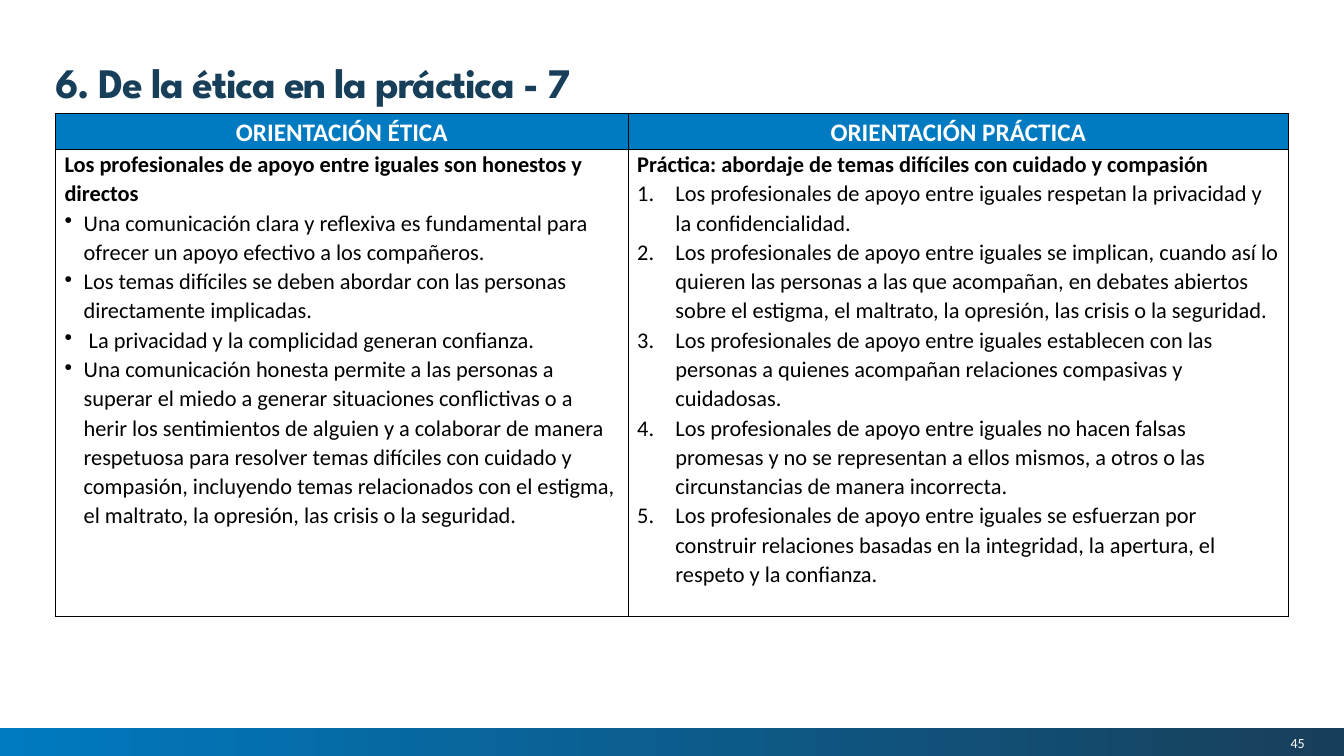
from lxml import etree
from pptx import Presentation
from pptx.dml.color import RGBColor
from pptx.enum.shapes import MSO_SHAPE
from pptx.enum.text import MSO_ANCHOR, MSO_AUTO_SIZE, PP_ALIGN
from pptx.oxml.ns import qn
from pptx.util import Inches, Pt

RECT = MSO_SHAPE.RECTANGLE
TOP, MIDDLE = MSO_ANCHOR.TOP, MSO_ANCHOR.MIDDLE
LEFT, CENTER, RIGHT = PP_ALIGN.LEFT, PP_ALIGN.CENTER, PP_ALIGN.RIGHT
NO_FIT = MSO_AUTO_SIZE.NONE

BLUE, NAVY, WHITE, BLACK = "007AC0", "183F5A", "FFFFFF", "000000"

ETHICS = [
    "Los profesionales de apoyo entre iguales son honestos y directos",
    "Una comunicación clara y reflexiva es fundamental para ofrecer un apoyo efectivo a los compañeros.",
    "Los temas difíciles se deben abordar con las personas directamente implicadas.",
    " La privacidad y la complicidad generan confianza.",
    "Una comunicación honesta permite a las personas a superar el miedo a generar situaciones "
    "conflictivas o a herir los sentimientos de alguien y a colaborar de manera respetuosa para "
    "resolver temas difíciles con cuidado y compasión, incluyendo temas relacionados con el estigma, "
    "el maltrato, la opresión, las crisis o la seguridad.",
]
PRACTICE = [
    "Práctica: abordaje de temas difíciles con cuidado y compasión",
    "Los profesionales de apoyo entre iguales respetan la privacidad y la confidencialidad.",
    "Los profesionales de apoyo entre iguales se implican, cuando así lo quieren las personas a las "
    "que acompañan, en debates abiertos sobre el estigma, el maltrato, la opresión, las crisis o la "
    "seguridad.",
    "Los profesionales de apoyo entre iguales establecen con las personas a quienes acompañan "
    "relaciones compasivas y cuidadosas.",
    "Los profesionales de apoyo entre iguales no hacen falsas promesas y no se representan a ellos "
    "mismos, a otros o las circunstancias de manera incorrecta.",
    "Los profesionales de apoyo entre iguales se esfuerzan por construir relaciones basadas en la "
    "integridad, la apertura, el respeto y la confianza.",
]


def color(code):
    return RGBColor.from_string(code)


class Deck:
    """Holds the style and the current slide."""

    font = "Calibri"
    head = "League Spartan"

    def __init__(self, prs):
        self.slide = prs.slides.add_slide(prs.slide_layouts[5])

    def run(self, para, text, size, tint, bold=False, font=None, align=LEFT):
        para.alignment = align
        run = para.add_run()
        run.text = text
        run.font.name = font or self.font
        run.font.size = Pt(size)
        run.font.bold = bold
        run.font.color.rgb = color(tint)
        return run

    def place(self, shape, box):
        shape.left, shape.top, shape.width, shape.height = map(Inches, box)

    def title(self, text, box):
        shape = self.slide.shapes.title
        self.place(shape, box)
        frame = shape.text_frame
        frame.auto_size = NO_FIT
        frame.vertical_anchor = TOP
        para = frame.paragraphs[0]
        para.line_spacing = Pt(33)
        run = self.run(para, text, 30, NAVY, True, self.head)
        run.font._element.set("spc", "-100")

    def band(self, box):
        shape = self.slide.shapes.add_shape(RECT, *map(Inches, box))
        shape.shadow.inherit = False
        shape.line.fill.background()
        shape.fill.gradient()
        shape.fill.gradient_angle = 0
        for stop, tint in zip(shape.fill.gradient_stops, (BLUE, NAVY)):
            stop.color.rgb = color(tint)

    def number(self, text, box):
        frame = self.slide.shapes.add_textbox(*map(Inches, box)).text_frame
        frame.word_wrap = True
        frame.vertical_anchor = MIDDLE
        frame.margin_left = frame.margin_right = 0
        frame.margin_top = frame.margin_bottom = 0
        self.run(frame.paragraphs[0], text, 10, WHITE, align=RIGHT)

    def table(self, box, cols, rows):
        frame = self.slide.shapes.add_table(len(rows), len(cols), *map(Inches, box))
        table = frame.table
        table.first_row = table.horz_banding = False
        for col, width in zip(table.columns, cols):
            col.width = Inches(width)
        for row, height in zip(table.rows, rows):
            row.height = Inches(height)
        return table

    def cell(self, cell, fill, side):
        cell.margin_left = cell.margin_right = Inches(side)
        cell.margin_top = cell.margin_bottom = 0
        props = cell._tc.get_or_add_tcPr()
        for edge in ("a:lnL", "a:lnR", "a:lnT", "a:lnB"):
            line = etree.SubElement(props, qn(edge), w=str(Pt(1)))
            solid = etree.SubElement(line, qn("a:solidFill"))
            etree.SubElement(solid, qn("a:srgbClr"), val=BLACK)
        cell.fill.solid()
        cell.fill.fore_color.rgb = color(fill)
        return cell.text_frame

    def bullet(self, para, indent, tag, **attrs):
        props = para._p.get_or_add_pPr()
        props.set("marL", str(Inches(indent)))
        props.set("indent", str(-Inches(indent)))
        etree.SubElement(props, qn(tag), **attrs)

    def header(self, cell, text):
        para = self.cell(cell, BLUE, 0.08).paragraphs[0]
        para.line_spacing = 1.13
        self.run(para, text, 18, WHITE, True, align=CENTER)

    def points(self, cell, lines, indent, tag, **attrs):
        frame = self.cell(cell, WHITE, 0.09)
        for i, text in enumerate(lines):
            para = frame.add_paragraph() if i else frame.paragraphs[0]
            if i:
                self.bullet(para, indent, tag, **attrs)
            para.line_spacing = 1.07
            self.run(para, text, 16, BLACK, bold=i == 0)


def main():
    prs = Presentation()
    prs.slide_width, prs.slide_height = Inches(13.33), Inches(7.5)
    deck = Deck(prs)

    # Footer band and page number
    deck.band((0, 7.22, 13.33, 0.28))
    deck.number("45", (11.14, 7.25, 1.8, 0.24))

    # Title
    deck.title("6. De la ética en la práctica - 7", (0.45, 0.55, 10.71, 0.47))

    # Ethics and practice table
    table = deck.table((0.55, 1.13, 12.23, 4.99), (5.68, 6.55), (0.35, 4.64))
    deck.header(table.cell(0, 0), "ORIENTACIÓN ÉTICA")
    deck.header(table.cell(0, 1), "ORIENTACIÓN PRÁCTICA")
    deck.points(table.cell(1, 0), ETHICS, 0.19, "a:buChar", char="•")
    deck.points(table.cell(1, 1), PRACTICE, 0.38, "a:buAutoNum", type="arabicPeriod")

    prs.save("out.pptx")


if __name__ == "__main__":
    main()
